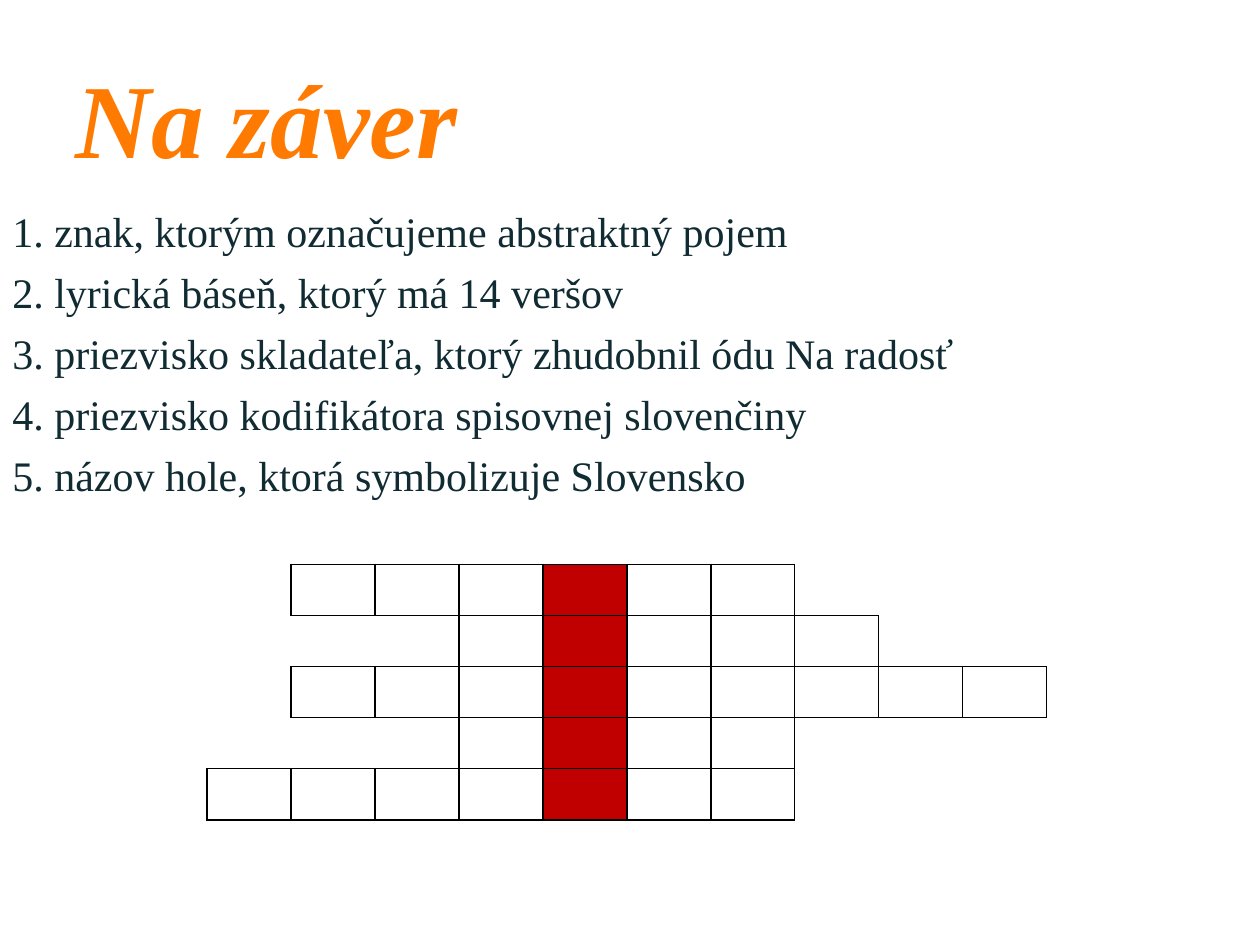
from lxml.etree import SubElement
from pptx import Presentation
from pptx.dml.color import RGBColor
from pptx.enum.text import MSO_ANCHOR
from pptx.oxml.ns import qn
from pptx.util import Pt

FONT = "Times New Roman"
COLORS = {"title": "FF7A00", "text": "102B32", "panel": "FFFFFF",
          "secret": "C00000", "border": "000000"}
CLUES = [
    "1. znak, ktorým označujeme abstraktný pojem",
    "2. lyrická báseň, ktorý má 14 veršov",
    "3. priezvisko skladateľa, ktorý zhudobnil ódu Na radosť",
    "4. priezvisko kodifikátora spisovnej slovenčiny",
    "5. názov hole, ktorá symbolizuje Slovensko",
]
# First and last column of each answer
ANSWERS = [(1, 6), (3, 7), (1, 9), (3, 6), (0, 6)]
COLUMNS = 10
SECRET_COLUMN = 4


def color(name):
    return RGBColor.from_string(COLORS[name])


def add_text_box(slide, box):
    shape = slide.shapes.add_textbox(*map(Pt, box))
    shape.text_frame.word_wrap = True
    return shape


def add_title(slide, box, text):
    frame = add_text_box(slide, box).text_frame
    frame.vertical_anchor = MSO_ANCHOR.MIDDLE
    heading = frame.paragraphs[0]
    heading.text = text
    font = heading.font
    font.name, font.size = FONT, Pt(60)
    font.bold = font.italic = True
    font.color.rgb = color("title")


def add_clues(slide, box):
    panel = add_text_box(slide, box)
    panel.fill.solid()
    panel.fill.fore_color.rgb = color("panel")
    white = panel.fill._xPr.find(qn("a:solidFill"))[0]
    SubElement(white, qn("a:alpha"), val="40000")
    frame = panel.text_frame
    frame.margin_top = Pt(6)
    for i, text in enumerate(CLUES):
        clue = frame.add_paragraph() if i else frame.paragraphs[0]
        clue.text = text
        if i:
            clue.space_before = Pt(6)
        properties = clue._p.get_or_add_pPr()
        properties.set("marL", str(Pt(27)))
        properties.set("indent", str(-Pt(27)))
        clue.font.name, clue.font.size = FONT, Pt(24)
        clue.font.color.rgb = color("text")


def in_answer(row, column):
    if not 0 <= row < len(ANSWERS):
        return False
    first, last = ANSWERS[row]
    return first <= column <= last


def set_borders(cell, row, column):
    """Draw each edge that touches a letter square on either side."""
    neighbours = {"L": (row, column - 1), "R": (row, column + 1),
                  "T": (row - 1, column), "B": (row + 1, column)}
    properties = cell._tc.get_or_add_tcPr()
    for side, neighbour in neighbours.items():
        line = SubElement(properties, qn(f"a:ln{side}"), w=str(Pt(1)))
        if in_answer(row, column) or in_answer(*neighbour):
            fill = SubElement(line, qn("a:solidFill"))
            SubElement(fill, qn("a:srgbClr"), val=COLORS["border"])
        else:
            SubElement(line, qn("a:noFill"))


def add_crossword(slide, box):
    left, top, width, height = map(Pt, box)
    table = slide.shapes.add_table(len(ANSWERS), COLUMNS,
                                   left, top, width, height).table
    table.first_row = table.horz_banding = False
    for row in range(len(ANSWERS)):
        for column in range(COLUMNS):
            cell = table.cell(row, column)
            cell.text_frame.paragraphs[0].font.size = Pt(12)
            set_borders(cell, row, column)
            if column == SECRET_COLUMN:
                cell.fill.solid()
                cell.fill.fore_color.rgb = color("secret")
            else:
                cell.fill.background()


def main():
    deck = Presentation()
    deck.slide_width, deck.slide_height = Pt(720), Pt(540)
    slide = deck.slides.add_slide(deck.slide_layouts[6])
    add_title(slide, (36, 21.6, 648, 90), "Na záver")
    add_clues(slide, (0, 111.6, 720, 428.4))
    add_crossword(slide, (118.2, 322.5, 480, 146))
    deck.save("out.pptx")


if __name__ == "__main__":
    main()
